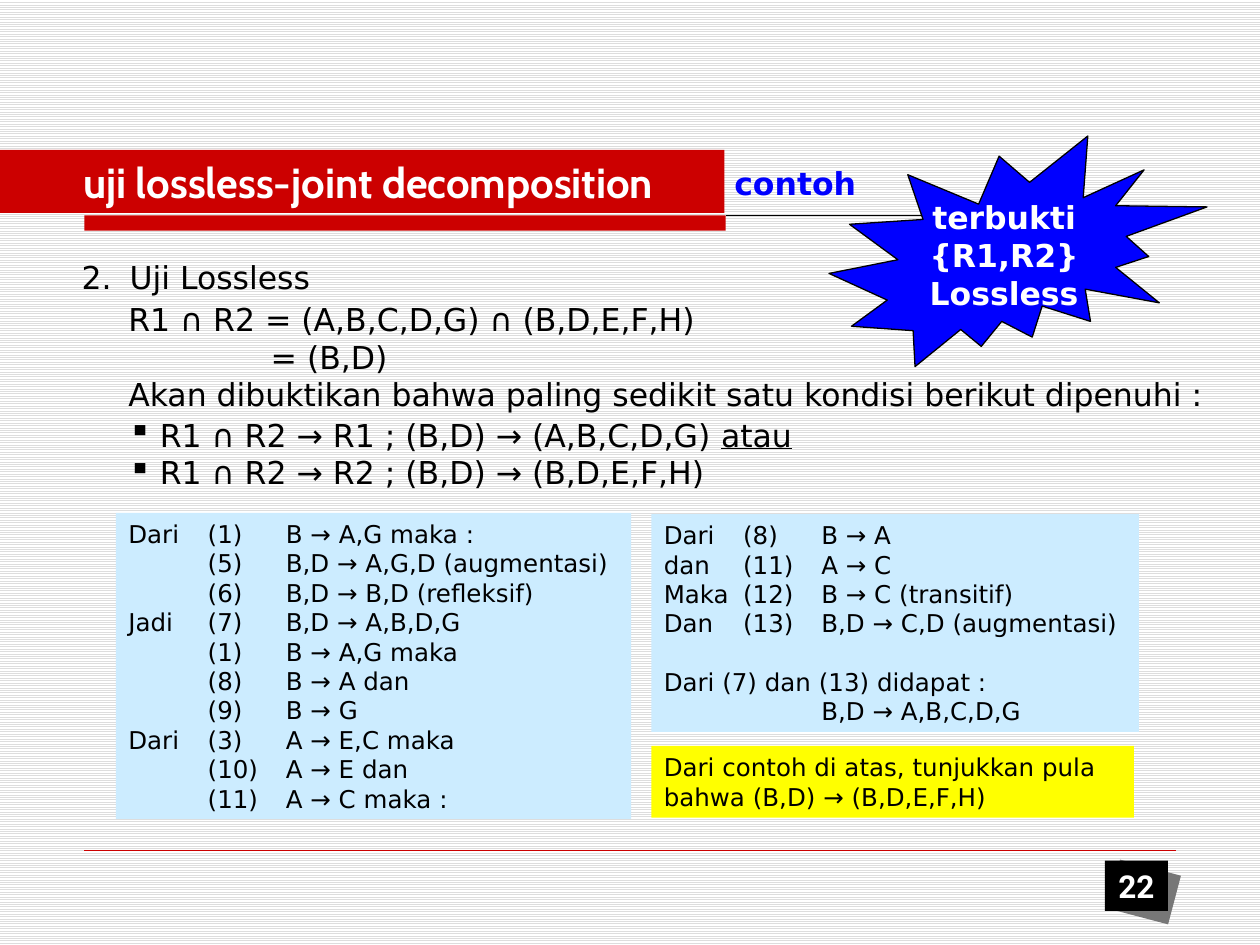
from lxml import etree
from pptx import Presentation
from pptx.dml.color import RGBColor
from pptx.enum.dml import MSO_PATTERN
from pptx.enum.shapes import MSO_CONNECTOR, MSO_SHAPE
from pptx.enum.text import MSO_ANCHOR, MSO_AUTO_SIZE, PP_ALIGN
from pptx.oxml.ns import qn
from pptx.util import Inches, Pt

RECT, BURST = MSO_SHAPE.RECTANGLE, MSO_SHAPE.EXPLOSION2
LEFT, CENTER = PP_ALIGN.LEFT, PP_ALIGN.CENTER
TOP, MIDDLE = MSO_ANCHOR.TOP, MSO_ANCHOR.MIDDLE
C = {"red": "CC0000", "blue": "0000FF", "pale": "CCECFF", "yellow": "FFFF00",
     "black": "000000", "white": "FFFFFF", "gray": "777777", "stripe": "DDDDDD"}
C = {name: RGBColor.from_string(value) for name, value in C.items()}


def add_shape(shapes, kind, box, fill):
    s = shapes.add_shape(kind, *[Inches(v) for v in box])
    s.shadow.inherit = False
    s.fill.solid()
    s.fill.fore_color.rgb = C[fill]
    s.line.fill.background()
    return s


def write(s, lines, size, color="black", font="DejaVu Sans", bold=False, align=LEFT,
          anchor=TOP, wrap=True, tabs=(), hang=0, bullet=None):
    tf = s.text_frame
    tf.text = "\n".join(lines)
    tf.word_wrap = wrap
    tf.auto_size = MSO_AUTO_SIZE.NONE
    tf.vertical_anchor = anchor
    for p in tf.paragraphs:
        p.alignment = align
        pPr = p._p.get_or_add_pPr()
        if hang:
            pPr.set("marL", str(Inches(hang)))
            pPr.set("indent", str(-Inches(hang)))
        if bullet:
            etree.SubElement(pPr, qn("a:buChar")).set("char", bullet)
        if tabs:
            tab_list = etree.SubElement(pPr, qn("a:tabLst"))
            for pos in tabs:
                tab = etree.SubElement(tab_list, qn("a:tab"))
                tab.set("pos", str(Inches(pos)))
                tab.set("algn", "l")
        for r in p.runs:
            r.font.size, r.font.name, r.font.bold = Pt(size), font, bold
            r.font.color.rgb = C[color]
    return tf


prs = Presentation()
prs.slide_width, prs.slide_height = Inches(10), Inches(7.5)
slide = prs.slides.add_slide(prs.slide_layouts[5])
shapes = slide.shapes

# Striped background
bg = slide.background.fill
bg.patterned()
bg.pattern = MSO_PATTERN.LIGHT_HORIZONTAL
bg.fore_color.rgb, bg.back_color.rgb = C["stripe"], C["white"]

# Title band
title = shapes.title
title.left, title.top = Inches(0), Inches(1.19)
title.width, title.height = Inches(5.75), Inches(0.5)
title.fill.solid()
title.fill.fore_color.rgb = C["red"]
write(title, ["\tuji lossless-joint decomposition"], 24, "white", "Cabin", True, tabs=[0.56])

# Rules below the title and above the footer
add_shape(shapes, RECT, (0.67, 1.71, 5.09, 0.12), "red")
for x1, x2, y, color, width in [(5.76, 9.37, 1.71, "black", 0.75),
                                (0.67, 9.33, 6.75, "red", 0.25)]:
    rule = shapes.add_connector(MSO_CONNECTOR.STRAIGHT, Inches(x1), Inches(y),
                                Inches(x2), Inches(y))
    rule.line.color.rgb, rule.line.width = C[color], Pt(width)
    etree.SubElement(rule._element.spPr, qn("a:effectLst"))

# Statement of the test
texts = [
    ((5.73, 1.25, 1.16, 0.4), ["contoh"], dict(color="blue", bold=True, wrap=False)),
    ((0.55, 2, 2.03, 0.4), ["2.\tUji Lossless"], dict(hang=0.38, wrap=False)),
    ((0.92, 2.33, 8.83, 1),
     ["R1 ∩ R2 = (A,B,C,D,G) ∩ (B,D,E,F,H)", "\t= (B,D)",
      "Akan dibuktikan bahwa paling sedikit satu kondisi berikut dipenuhi :"],
     dict(tabs=[1.13])),
    ((0.92, 3.25, 5.92, 0.7),
     ["R1 ∩ R2 → R1 ; (B,D) → (A,B,C,D,G) ", "R1 ∩ R2 → R2 ; (B,D) → (B,D,E,F,H)"],
     dict(hang=0.25, bullet="▪")),
]
for box, lines, style in texts:
    tf = write(shapes.add_textbox(*[Inches(v) for v in box]), lines, 18, **style)

# Underlined "or" after the first condition
r = tf.paragraphs[0].add_run()
r.text = "atau"
r.font.size, r.font.name, r.font.underline = Pt(18), "DejaVu Sans", True
r.font.color.rgb = C["black"]

# Derivation panels
columns = [0.63, 1.25]
left = add_shape(shapes, RECT, (0.92, 4.07, 4.09, 2.43), "pale")
write(left, ["Dari\t(1)\tB → A,G maka :",
             "\t(5)\tB,D → A,G,D (augmentasi)",
             "\t(6)\tB,D → B,D (refleksif)",
             "Jadi\t(7)\tB,D → A,B,D,G",
             "\t(1)\tB → A,G maka",
             "\t(8)\tB → A dan",
             "\t(9)\tB → G",
             "Dari\t(3)\tA → E,C maka",
             "\t(10)\tA → E dan",
             "\t(11)\tA → C maka :"], 14, wrap=False, tabs=columns)

right = add_shape(shapes, RECT, (5.17, 4.08, 3.87, 1.73), "pale")
tf = write(right, ["Dari\t(8)\tB → A",
                   "dan\t(11)\tA → C",
                   "Maka\t(12)\tB → C (transitif)",
                   "Dan\t(13)\tB,D → C,D (augmentasi)",
                   "Dari (7) dan (13) didapat :",
                   "\t\tB,D → A,B,C,D,G"], 14, wrap=False, tabs=columns)
tf.paragraphs[4].space_before = Pt(16.5)

task = add_shape(shapes, RECT, (5.17, 5.92, 3.83, 0.57), "yellow")
write(task, ["Dari contoh di atas, tunjukkan pula bahwa (B,D) → (B,D,E,F,H)"], 14)

# Conclusion burst
burst = add_shape(shapes, BURST, (6.58, 1.08, 3, 1.83), "blue")
burst.line.color.rgb, burst.line.width = C["black"], Pt(0.75)
write(burst, ["terbukti", "{R1,R2}", "Lossless"], 18, "white", bold=True,
      align=CENTER, anchor=MIDDLE, wrap=False)

# Page number badge
badge = shapes.add_group_shape()
add_shape(badge.shapes, RECT, (8.83, 6.88, 0.5, 0.4), "gray").rotation = 14.8
number = add_shape(badge.shapes, RECT, (8.77, 6.83, 0.5, 0.4), "black")
write(number, ["22"], 18, "white", "Roboto", True, CENTER, MIDDLE)

prs.save("out.pptx")
